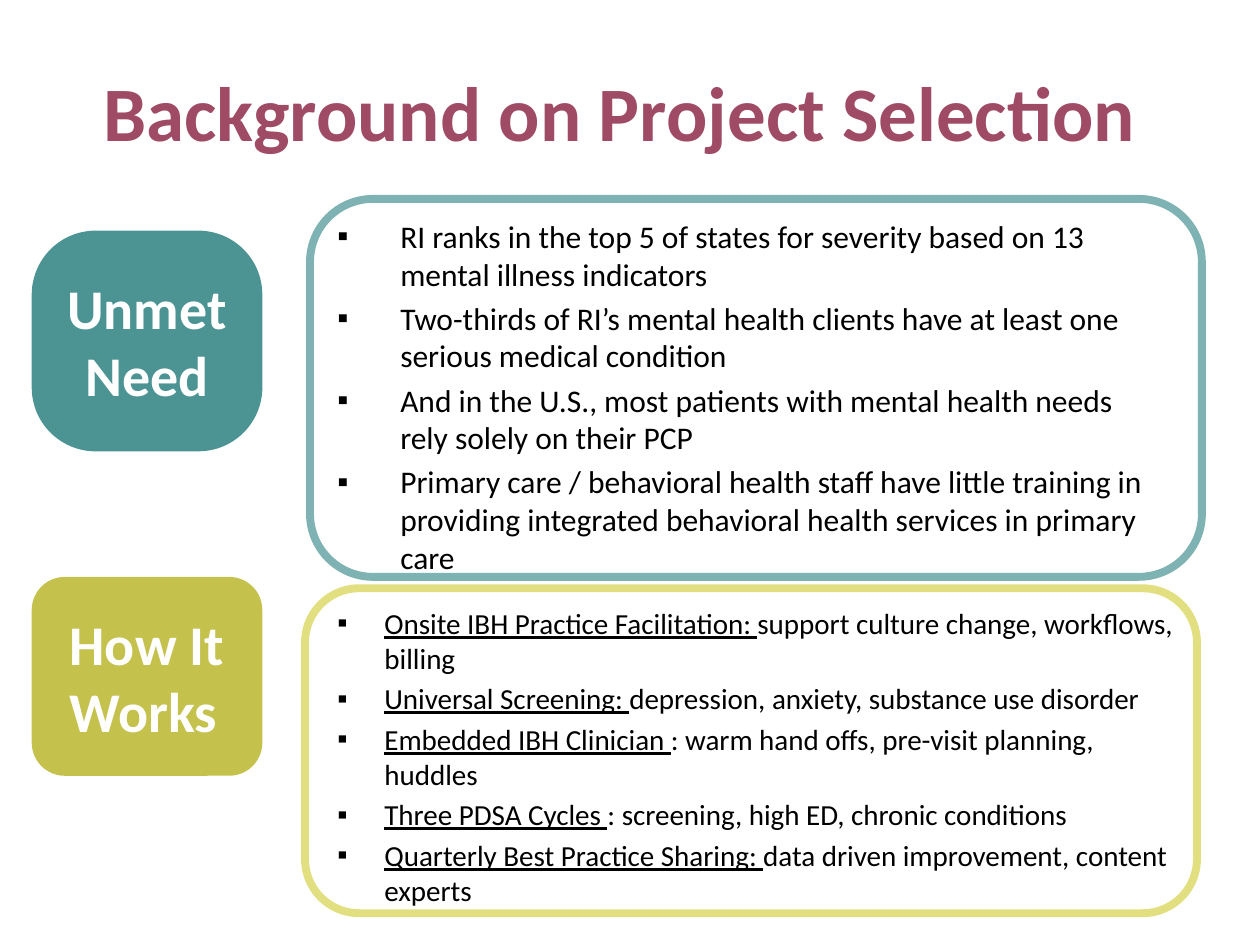
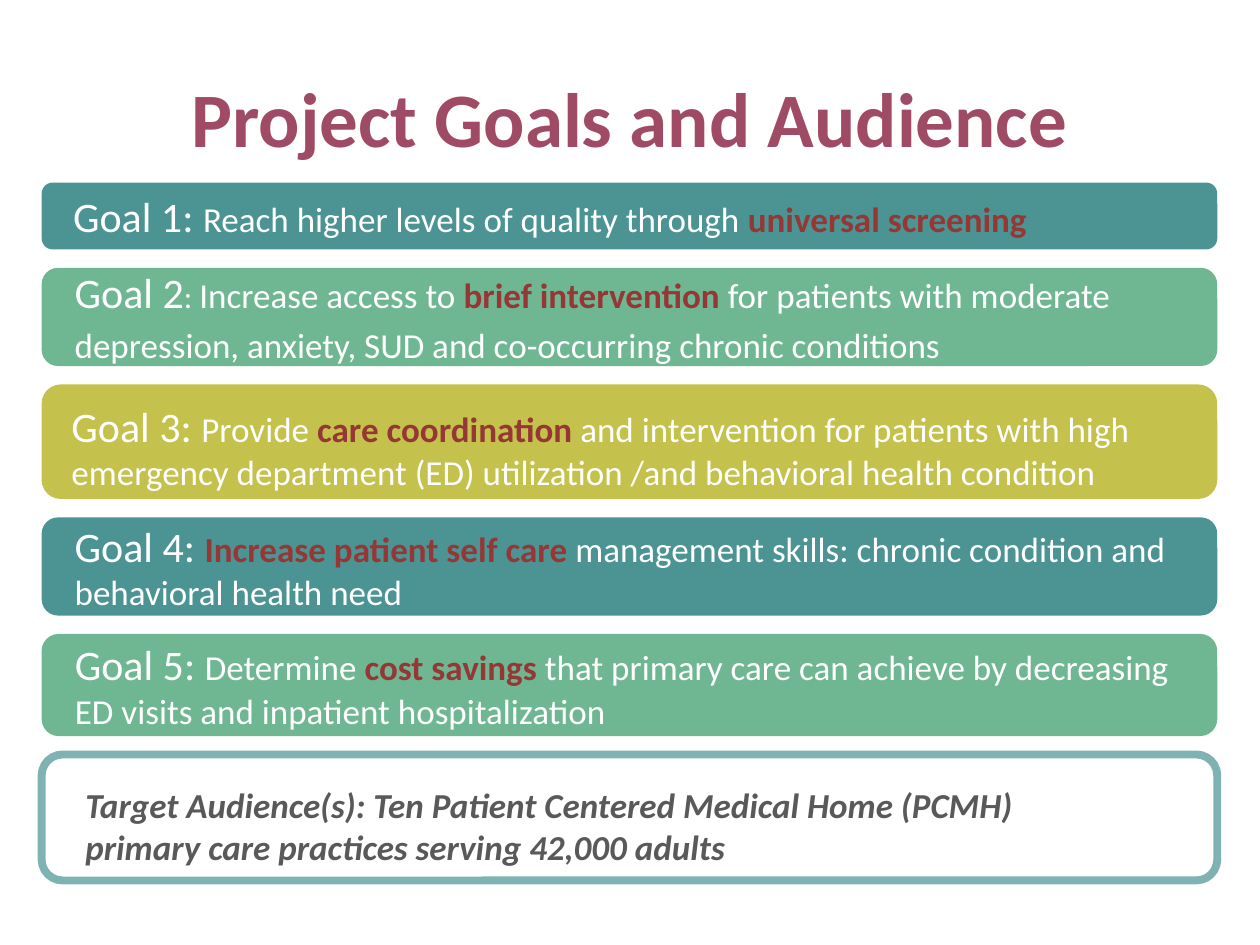
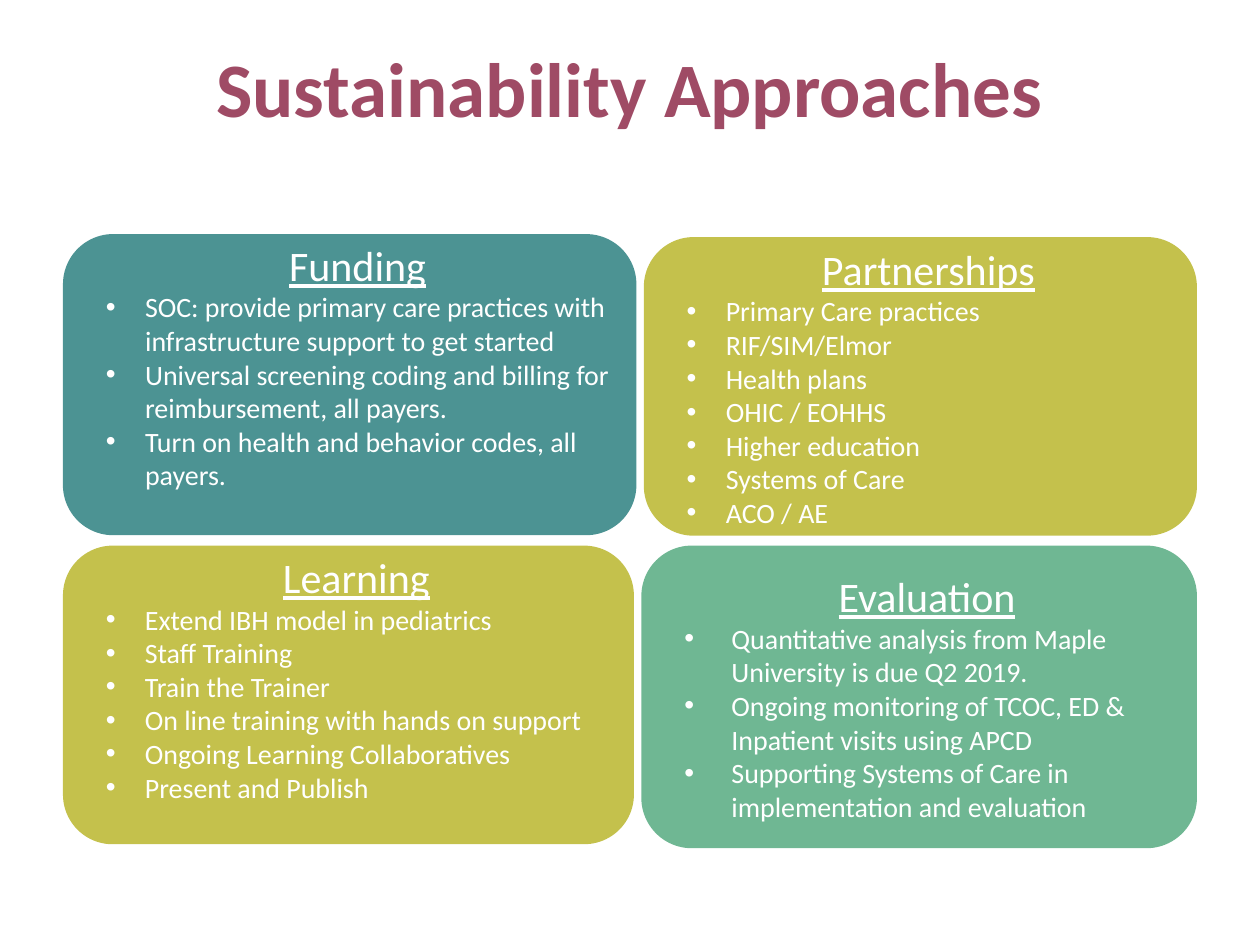
from dataclasses import dataclass
from typing import Optional

from pptx import Presentation
from pptx.dml.color import RGBColor
from pptx.enum.shapes import MSO_SHAPE
from pptx.enum.text import MSO_ANCHOR, PP_ALIGN
from pptx.oxml.ns import qn
from pptx.util import Cm, Pt
from lxml.etree import SubElement

FONT = "Calibri"
PLUM = RGBColor(0x9F, 0x4B, 0x65)
TEAL = RGBColor(0x00, 0x66, 0x66)
GREEN = RGBColor(0x33, 0x99, 0x66)
OLIVE = RGBColor(0xAC, 0xA8, 0x00)
LIME = RGBColor(0xC5, 0xC0, 0x00)
BRICK = RGBColor(0x95, 0x37, 0x35)
GRAY = RGBColor(0x59, 0x59, 0x59)
BLACK = RGBColor(0x00, 0x00, 0x00)
WHITE = RGBColor(0xFF, 0xFF, 0xFF)

INSET = 0.13  # default top and bottom text margin, cm


@dataclass(frozen=True)
class Box:
    left: float
    top: float
    width: float
    height: float

    def lengths(self) -> tuple:
        return Cm(self.left), Cm(self.top), Cm(self.width), Cm(self.height)


@dataclass(frozen=True)
class Span:
    text: str
    size: float
    color: RGBColor = WHITE
    bold: bool = False
    italic: bool = False
    underline: bool = False


@dataclass(frozen=True)
class Para:
    spans: list[Span]
    align: PP_ALIGN = PP_ALIGN.LEFT
    indent: float = 0
    hanging: float = 0
    bullet: str = ""
    before: float = 0


@dataclass(frozen=True)
class Goal:
    height: float
    color: RGBColor
    spans: list[Span]
    indent: float = 0.32
    top_inset: float = INSET


@dataclass(frozen=True)
class Card:
    box: Box
    color: RGBColor
    heading: str
    items: list[str]
    indent: float = 1.11
    hanging: float = 0.79
    bottom_inset: float = INSET


# ---- Drawing functions ----
def write(shape, paras: list[Para], *, anchor=MSO_ANCHOR.TOP,
          top: float = INSET, bottom: float = INSET) -> None:
    """Fill a shape or text box with formatted paragraphs."""
    frame = shape.text_frame
    frame.word_wrap = True
    frame.vertical_anchor = anchor
    frame.margin_top, frame.margin_bottom = Cm(top), Cm(bottom)
    for index, para in enumerate(paras):
        paragraph = frame.add_paragraph() if index else frame.paragraphs[0]
        paragraph.alignment = para.align
        paragraph.space_before = Pt(para.before)
        properties = paragraph._p.get_or_add_pPr()
        properties.set("marL", str(Cm(para.indent)))
        properties.set("indent", str(-Cm(para.hanging)))
        if para.bullet:
            SubElement(properties, qn("a:buFont")).set("typeface", "Arial")
            SubElement(properties, qn("a:buChar")).set("char", para.bullet)
        for span in para.spans:
            run = paragraph.add_run()
            run.text = span.text
            font = run.font
            font.name, font.size = FONT, Pt(span.size)
            font.color.rgb = span.color
            font.bold, font.italic = span.bold, span.italic
            font.underline = span.underline


def add_text(page, box: Box, paras: list[Para], **layout) -> None:
    write(page.shapes.add_textbox(*box.lengths()), paras, **layout)


def add_panel(page, box: Box, *, fill: Optional[RGBColor] = None,
              line: Optional[RGBColor] = None, corner: Optional[float] = None):
    """Rounded rectangle with a translucent fill or a translucent outline."""
    shape = page.shapes.add_shape(MSO_SHAPE.ROUNDED_RECTANGLE, *box.lengths())
    shape.shadow.inherit = False
    if corner is not None:
        shape.adjustments[0] = corner
    if fill is not None:
        shape.fill.solid()
        shape.fill.fore_color.rgb = fill
    else:
        shape.fill.background()
    if line is not None:
        shape.line.color.rgb = line
        shape.line.width = Pt(4.5)
    else:
        shape.line.fill.background()
    opacity = 70 if fill is not None else 50
    for color in shape.element.spPr.iter(qn("a:srgbClr")):
        SubElement(color, qn("a:alpha")).set("val", str(opacity * 1000))
    return shape


def add_page(deck, title: str, left: float, top: float):
    page = deck.slides.add_slide(deck.slide_layouts[6])
    add_text(page, Box(left, top, 22.86, 3.18),
             [Para([Span(title, 44, PLUM, bold=True)], PP_ALIGN.CENTER)],
             anchor=MSO_ANCHOR.MIDDLE)
    return page


def key(text: str) -> Span:
    return Span(text, 20, BRICK, bold=True)


def goal_spans(number: int, *rest: Span) -> list[Span]:
    return [Span(f"Goal {number}: ", 24), *rest]


# ---- Background ----
NEEDS = [
    "RI ranks in the top 5 of states for severity based on 13 mental illness indicators",
    "Two-thirds of RI’s mental health clients have at least one serious medical condition",
    "And in the U.S., most patients with mental health needs rely solely on their PCP",
    "Primary care / behavioral health staff have little training in providing "
    "integrated behavioral health services in primary care",
]
METHODS = [
    ("Onsite IBH Practice Facilitation: ", "support culture change, workflows, billing"),
    ("Universal Screening: ", "depression, anxiety, substance use disorder"),
    ("Embedded IBH Clinician ", ": warm hand offs, pre-visit planning, huddles"),
    ("Three PDSA Cycles ", ": screening, high ED, chronic conditions"),
    ("Quarterly Best Practice Sharing: ", "data driven improvement, content experts"),
]


def build_background(deck) -> None:
    page = add_page(deck, "Background on Project Selection", 1.07, 0.64)
    add_text(page, Box(6.55, 4.24, 17.15, 6.98),
             [Para([Span(need, 18, BLACK)], indent=1.27, hanging=1.27,
                   bullet="▪", before=3.6) for need in NEEDS])
    need_label = add_panel(page, Box(0.64, 4.65, 4.65, 4.45), fill=TEAL, corner=0.29)
    write(need_label, [Para([Span("Unmet Need", 32, bold=True)], PP_ALIGN.CENTER)],
          anchor=MSO_ANCHOR.MIDDLE)
    add_panel(page, Box(6.25, 4.01, 17.98, 7.62), line=TEAL)
    method_label = add_panel(page, Box(0.64, 11.63, 4.65, 4.01), fill=OLIVE)
    write(method_label, [Para([Span("How It Works", 32, bold=True)], indent=0.32)],
          anchor=MSO_ANCHOR.MIDDLE)
    add_panel(page, Box(6.15, 11.86, 17.98, 6.55), line=LIME)
    add_text(page, Box(6.55, 12.07, 17.35, 6.35),
             [Para([Span(lead, 16.6, BLACK, underline=True), Span(detail, 16.6, BLACK)],
                   indent=0.95, hanging=0.95, bullet="▪", before=3.3)
              for lead, detail in METHODS])


# ---- Goals ----
GOALS = [
    Goal(1.35, TEAL, goal_spans(
        1, Span("Reach higher levels of quality through ", 20), key("universal screening"))),
    # The larger closing space sets the height of the second line
    Goal(1.98, GREEN, [
        Span("Goal 2", 24), Span(": ", 18), Span("Increase access to ", 20),
        key("brief intervention "),
        Span("for patients with moderate depression, anxiety, SUD and "
             "co-occurring chronic conditions", 20), Span(" ", 24)]),
    Goal(2.31, OLIVE, goal_spans(
        3, Span("Provide ", 20), key("care coordination "),
        Span("and intervention for patients with high emergency department (ED) "
             "utilization /and behavioral health condition", 20)),
        indent=0.24, top_inset=0.33),
    Goal(1.98, TEAL, goal_spans(
        4, key("Increase patient self care "),
        Span("management skills: chronic condition and behavioral health need", 20))),
    Goal(2.06, GREEN, goal_spans(
        5, Span("Determine ", 20), key("cost savings "),
        Span("that primary care can achieve by decreasing ED visits and "
             "inpatient hospitalization", 20))),
]
GOAL_LEFT, GOAL_TOP, GOAL_WIDTH, GOAL_GAP = 0.84, 3.68, 23.7, 0.37


def build_goals(deck) -> None:
    page = add_page(deck, "Project Goals and Audience", 1.27, 0.76)
    top = GOAL_TOP
    for goal in GOALS:
        bar = add_panel(page, Box(GOAL_LEFT, top, GOAL_WIDTH, goal.height), fill=goal.color)
        write(bar, [Para(goal.spans, indent=goal.indent)],
              anchor=MSO_ANCHOR.MIDDLE, top=goal.top_inset)
        top += goal.height + GOAL_GAP
    add_panel(page, Box(GOAL_LEFT, top, GOAL_WIDTH, 2.54), line=TEAL)
    audience = ("Target Audience(s): Ten Patient Centered Medical Home (PCMH) "
                "primary care practices serving 42,000 adults")
    add_text(page, Box(1.47, 15.67, 20.32, 1.78),
             [Para([Span(audience, 20, GRAY, bold=True, italic=True)], before=4)])


# ---- Sustainability ----
CARDS = [
    Card(Box(1.27, 4.72, 11.56, 6.07), TEAL, "Funding", [
        "SOC: provide primary care practices with infrastructure support to get started",
        "Universal screening coding and billing for reimbursement, all payers.",
        "Turn on health and behavior codes, all payers.",
    ], bottom_inset=0.9),
    Card(Box(12.93, 11, 11.2, 6.1), GREEN, "Evaluation", [
        "Quantitative analysis from Maple University is due Q2 2019.",
        "Ongoing monitoring of TCOC, ED & Inpatient visits using APCD",
        "Supporting Systems of Care in implementation and evaluation",
    ], indent=1.27, hanging=0.95),
    Card(Box(12.98, 4.78, 11.15, 6.02), OLIVE, "Partnerships", [
        "Primary Care practices", "RIF/SIM/Elmor", "Health plans", "OHIC / EOHHS",
        "Higher education", "Systems of Care", "ACO / AE",
    ]),
    Card(Box(1.27, 11, 11.51, 6.02), OLIVE, "Learning", [
        "Extend IBH model in pediatrics", "Staff Training", "Train the Trainer",
        "On line training with hands on support", "Ongoing Learning Collaboratives",
        "Present and Publish",
    ], bottom_inset=0.82),
]


def build_sustainability(deck) -> None:
    page = add_page(deck, "Sustainability Approaches", 1.27, 0.15)
    for card in CARDS:
        heading = Para([Span(card.heading, 24, underline=True)], PP_ALIGN.CENTER, indent=0.32)
        items = [Para([Span(item, 16)], indent=card.indent, hanging=card.hanging, bullet="•")
                 for item in card.items]
        write(add_panel(page, card.box, fill=card.color), [heading, *items],
              anchor=MSO_ANCHOR.MIDDLE, bottom=card.bottom_inset)


def main() -> None:
    deck = Presentation()
    deck.slide_width, deck.slide_height = Cm(25.4), Cm(19.05)
    build_background(deck)
    build_goals(deck)
    build_sustainability(deck)
    deck.save("out.pptx")


if __name__ == "__main__":
    main()
